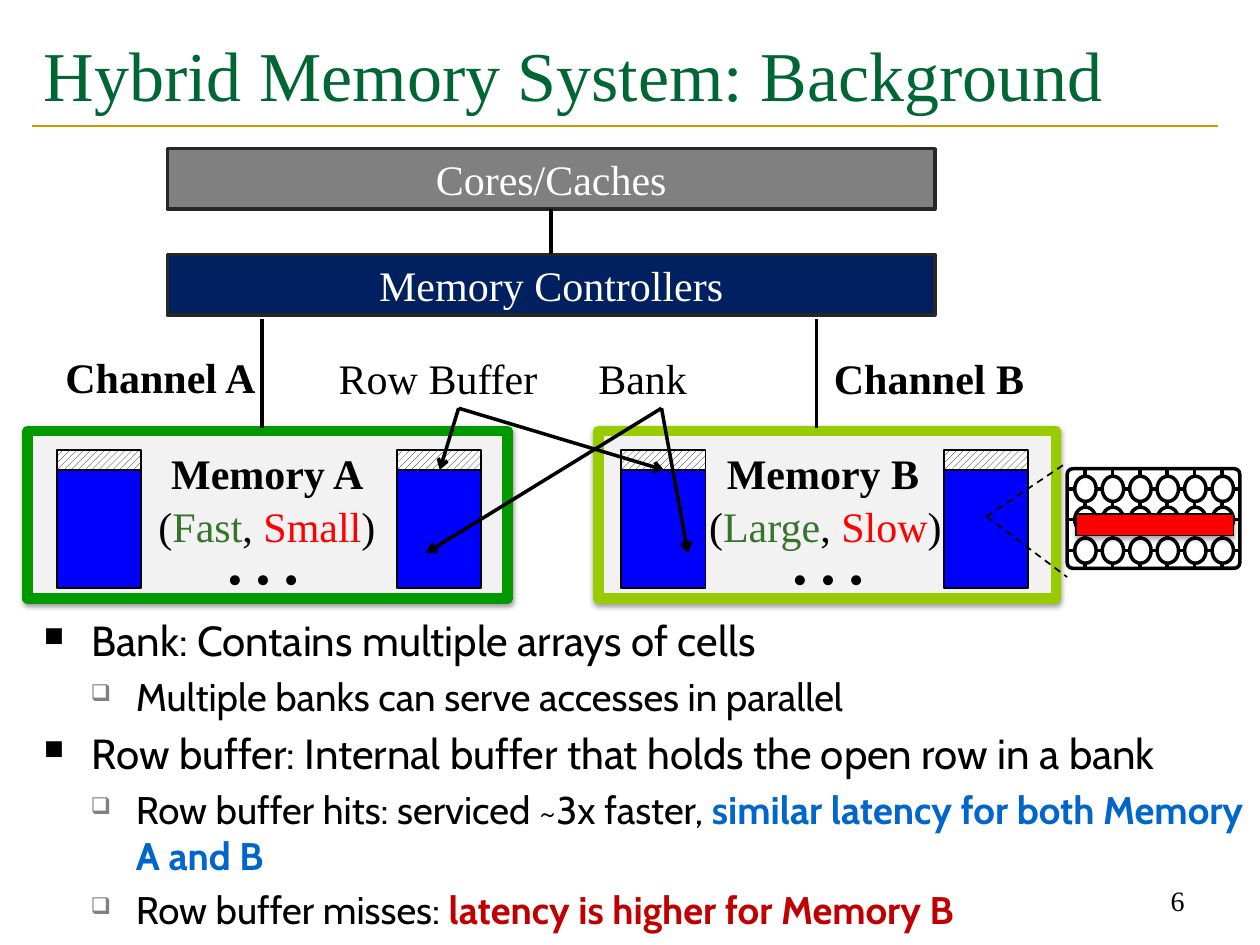
from lxml import etree
from pptx import Presentation
from pptx.dml.color import RGBColor
from pptx.enum.dml import MSO_LINE, MSO_PATTERN
from pptx.enum.shapes import MSO_CONNECTOR, MSO_SHAPE
from pptx.enum.text import MSO_ANCHOR, PP_ALIGN
from pptx.oxml.ns import qn
from pptx.util import Inches, Pt

RECTANGLE = MSO_SHAPE.RECTANGLE
ROUNDED = MSO_SHAPE.ROUNDED_RECTANGLE
OVAL = MSO_SHAPE.OVAL
STRAIGHT = MSO_CONNECTOR.STRAIGHT
HATCH = MSO_PATTERN.WIDE_UPWARD_DIAGONAL
DASH = MSO_LINE.DASH
MIDDLE, BOTTOM = MSO_ANCHOR.MIDDLE, MSO_ANCHOR.BOTTOM
LEFT, CENTER, RIGHT = PP_ALIGN.LEFT, PP_ALIGN.CENTER, PP_ALIGN.RIGHT

SERIF, SANS = "Times New Roman", "Cabin"
BLACK, WHITE, BLUE, RED, GREEN = "000000", "FFFFFF", "0000FF", "FF0000", "35742A"

# level, then (text, color, bold) runs
BULLETS = [
    (0, [("Bank: Contains multiple arrays of cells", BLACK, False)]),
    (1, [("Multiple banks can serve accesses in parallel", BLACK, False)]),
    (0, [("Row buffer: Internal buffer that holds the open row in a bank", BLACK, False)]),
    (1, [("Row buffer hits: serviced ~3x faster, ", BLACK, False),
         ("similar latency for both Memory A and B", "0066CC", True)]),
    (1, [("Row buffer misses: ", BLACK, False),
         ("latency is higher for Memory B", "C00000", True)]),
]
# text size, left margin, hanging indent, symbol, symbol color, symbol percent
BULLET_LEVELS = [(24, 0.38, 0.38, "■", BLACK, 65), (22, 0.73, 0.36, "❑", "808080", 60)]


def rgb(color):
    return RGBColor.from_string(color)


def add_child(parent, tag, **attributes):
    return etree.SubElement(parent, qn(tag), {k: str(v) for k, v in attributes.items()})


def add_shadow(shape, opacity, distance):
    """Soft shadow cast straight down."""
    effects = shape._element.spPr.find(qn("a:effectLst"))
    shadow = add_child(effects, "a:outerShdw", blurRad=Pt(3.1), dist=Pt(distance),
                       dir=90 * 60000, rotWithShape=0)
    color = add_child(shadow, "a:srgbClr", val=BLACK)
    add_child(color, "a:alpha", val=opacity * 1000)


def add_box(shapes, kind, left, top, width, height, fill, line=BLACK, weight=2):
    shape = shapes.add_shape(kind, Inches(left), Inches(top), Inches(width), Inches(height))
    shape.shadow.inherit = False
    shape.fill.solid()
    shape.fill.fore_color.rgb = rgb(fill)
    shape.line.color.rgb = rgb(line)
    shape.line.width = Pt(weight)
    return shape


def add_line(shapes, start, end, color=BLACK, weight=2, arrow=False, dash=None):
    line = shapes.add_connector(STRAIGHT, *(Inches(value) for value in (*start, *end)))
    line.line.color.rgb = rgb(color)
    line.line.width = Pt(weight)
    if dash:
        line.line.dash_style = dash
    if arrow:
        add_child(line.line._get_or_add_ln(), "a:tailEnd", type="arrow")
    add_child(line._element.spPr, "a:effectLst")
    return line


def add_runs(paragraph, runs):
    for text, color, bold in runs:
        run = paragraph.add_run()
        run.text = text
        run.font.color.rgb = rgb(color)
        run.font.bold = bold


def write(frame, runs, size, align=LEFT, anchor=None):
    paragraph = frame.paragraphs[0]
    paragraph.font.name = SERIF
    paragraph.font.size = Pt(size)
    paragraph.alignment = align
    add_runs(paragraph, runs)
    if anchor is not None:
        frame.vertical_anchor = anchor


def add_label(shapes, left, top, width, height, runs, size=24, align=LEFT, anchor=None):
    box = shapes.add_textbox(Inches(left), Inches(top), Inches(width), Inches(height))
    write(box.text_frame, runs, size, align, anchor)
    return box


def add_layer(shapes, top, text, fill):
    """Full-width block of the system stack."""
    box = add_box(shapes, RECTANGLE, 1.33, top, 6.09, 0.48, fill, "262626")
    write(box.text_frame, [(text, WHITE, False)], 24, CENTER, MIDDLE)
    return box


def add_bank(shapes, left):
    group = shapes.add_group_shape().shapes
    add_box(group, RECTANGLE, left, 3.73, 0.67, 0.94, BLUE, weight=1)
    row_buffer = add_box(group, RECTANGLE, left, 3.57, 0.67, 0.16, WHITE, weight=1)
    row_buffer.fill.patterned()
    row_buffer.fill.pattern = HATCH
    row_buffer.fill.fore_color.rgb = rgb(BLACK)
    row_buffer.fill.back_color.rgb = rgb(WHITE)


def add_memory(shapes, left, width, border, banks, dots_left):
    frame = add_box(shapes, RECTANGLE, left, 3.42, width, 1.33, "F2F2F2", border, 6)
    add_shadow(frame, 38, 1.6)
    for bank_left in banks:
        add_bank(shapes, bank_left)
    add_label(shapes, dots_left, 3.92, 0.88, 0.91, [("…", BLACK, False)], 48)


def add_traits(shapes, left, width, good, bad):
    add_label(shapes, left, 3.92, width, 0.5, [
        ("(", BLACK, False), (good, GREEN, False), (", ", BLACK, False),
        (bad, RED, False), (")", BLACK, False)])


def add_cell_array(shapes):
    group = shapes.add_group_shape().shapes
    frame = add_box(group, ROUNDED, 8.47, 3.72, 1.37, 0.79, WHITE)
    frame.adjustments[0] = 0.055
    columns = [8.61 + 0.218 * column for column in range(6)]
    for x in columns:
        add_line(group, (x, 4.51), (x, 3.73))
    for row in range(3):
        y = 3.88 + 0.245 * row
        add_line(group, (9.83, y), (8.47, y))
        for x in columns:
            add_box(group, OVAL, x - 0.08, y - 0.1, 0.17, 0.2, WHITE)
    for y in (3.67, 4.58):
        add_line(group, (7.83, 4.1), (8.47, y), weight=1, dash=DASH)
    open_row = add_box(shapes, RECTANGLE, 8.54, 4.08, 1.25, 0.17, RED, weight=0.75)
    add_shadow(open_row, 35, 1.8)


def add_bullets(shapes):
    box = shapes.add_textbox(Inches(0.25), Inches(4.83), Inches(9.75), Inches(2.12))
    frame = box.text_frame
    frame.word_wrap = True
    for index, (level, runs) in enumerate(BULLETS):
        size, margin, hanging, symbol, color, percent = BULLET_LEVELS[level]
        paragraph = frame.add_paragraph() if index else frame.paragraphs[0]
        paragraph.level = level
        paragraph.font.name = SANS
        paragraph.font.size = Pt(size)
        paragraph.space_before = Pt(size * 0.2)
        add_runs(paragraph, runs)
        properties = paragraph._p.get_or_add_pPr()
        properties.set("marL", str(Inches(margin)))
        properties.set("indent", str(-Inches(hanging)))
        bullet = etree.Element(qn("a:buClr"))
        add_child(bullet, "a:srgbClr", val=color)
        size_element = etree.Element(qn("a:buSzPct"), val=str(percent * 1000))
        character = etree.Element(qn("a:buChar"), char=symbol)
        default_run = properties.find(qn("a:defRPr"))
        for element in (bullet, size_element, character):
            default_run.addprevious(element)


def main():
    presentation = Presentation()
    presentation.slide_width, presentation.slide_height = Inches(10), Inches(7.5)
    shapes = presentation.slides.add_slide(presentation.slide_layouts[6]).shapes

    add_line(shapes, (0.25, 1), (9.67, 1), "CC9900", 1.5)
    add_label(shapes, 0.25, 0.17, 9.42, 0.83,
              [("Hybrid Memory System: Background", "006633", False)], 40, anchor=MIDDLE)
    add_bullets(shapes)
    add_label(shapes, 7.17, 6.83, 2.33, 0.5, [("6", BLACK, False)], 16, RIGHT, BOTTOM)

    cores = add_layer(shapes, 1.18, "Cores/Caches", "808080")
    controllers = add_layer(shapes, 2.02, "Memory Controllers", "002060")
    link = add_line(shapes, (4.38, 1.66), (4.38, 2.02))
    link.begin_connect(cores, 2)
    link.end_connect(controllers, 0)

    add_memory(shapes, 0.22, 3.81, "009900", (0.45, 3.15), 1.66)
    add_memory(shapes, 4.75, 3.63, "99CC00", (4.93, 7.49), 6.14)
    for x in (2.08, 6.48):
        add_line(shapes, (x, 3.4), (x, 2.53))

    for text, left, top, width, bold in (
            ("Row Buffer", 2.59, 2.75, 1.8, False), ("Bank", 4.65, 2.75, 0.92, False),
            ("Channel A", 0.42, 2.74, 1.72, True), ("Channel B", 6.52, 2.75, 1.73, True),
            ("Memory A", 1.26, 3.5, 1.81, True), ("Memory B", 5.67, 3.5, 1.74, True)):
        add_label(shapes, left, top, width, 0.5, [(text, BLACK, bold)])
    add_traits(shapes, 1.16, 1.94, "Fast", "Small")
    add_traits(shapes, 5.53, 2.07, "Large", "Slow")

    for start, targets in (((3.64, 3.24), ((3.49, 3.73), (5.27, 3.73))),
                           ((5.25, 3.24), ((3.38, 4.39), (5.46, 4.39)))):
        for target in targets:
            add_line(shapes, start, target, arrow=True)
    add_cell_array(shapes)
    presentation.save("out.pptx")


if __name__ == "__main__":
    main()
